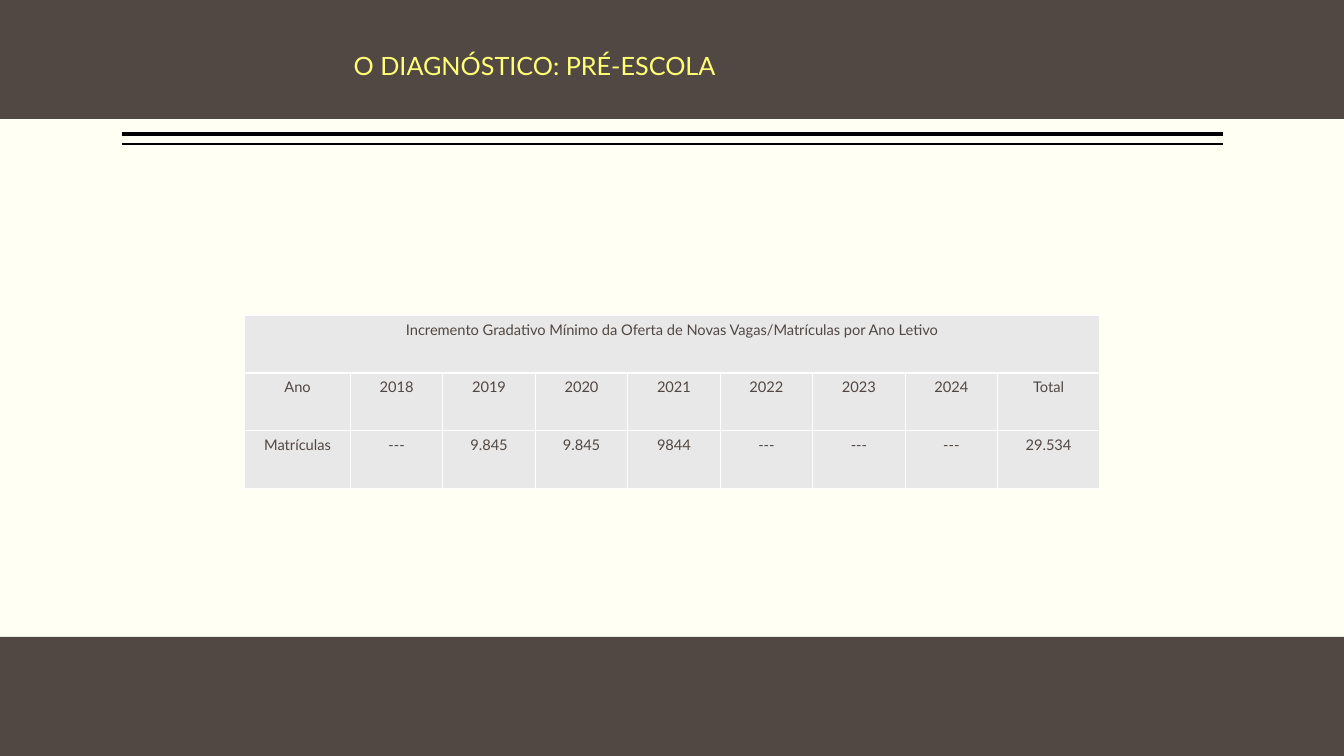
from lxml import etree
from pptx import Presentation
from pptx.dml.color import RGBColor
from pptx.enum.shapes import MSO_CONNECTOR, MSO_SHAPE
from pptx.enum.text import MSO_ANCHOR, PP_ALIGN
from pptx.oxml.ns import qn
from pptx.util import Cm, Pt

STRAIGHT = MSO_CONNECTOR.STRAIGHT
RECTANGLE = MSO_SHAPE.RECTANGLE
TOP = MSO_ANCHOR.TOP
CENTER = PP_ALIGN.CENTER
LEFT = PP_ALIGN.LEFT

FONT = "Lato"
COLORS = {
    "background": "FFFFF3",
    "band": "514843",
    "rule": "000000",
    "title": "FFFF76",
    "cell": "E9E8E8",
    "border": "FFFFFF",
    "text": "514843",
}
SLIDE_WIDTH, SLIDE_HEIGHT = Cm(33.87), Cm(19.05)
BAND_HEIGHT = Cm(3)
RULES = [(3.38, 3), (3.63, 1)]
COLUMN_WIDTHS = [2.66] + [2.33] * 7 + [2.57]
ROW_HEIGHT = 1.45
CAPTION = "Incremento Gradativo Mínimo da Oferta de Novas Vagas/Matrículas por Ano Letivo"
ROWS = [
    ["Ano", *map(str, range(2018, 2025)), "Total"],
    ["Matrículas", "---", "9.845", "9.845", "9844", "---", "---", "---", "29.534"],
]


def color(name):
    return RGBColor.from_string(COLORS[name])


def format_paragraph(paragraph, size, color_name, alignment):
    paragraph.alignment = alignment
    paragraph.font.name = FONT
    paragraph.font.size = Pt(size)
    paragraph.font.bold = False
    paragraph.font.color.rgb = color(color_name)


def add_band(slide, top):
    band = slide.shapes.add_shape(RECTANGLE, 0, top, SLIDE_WIDTH, BAND_HEIGHT)
    band.shadow.inherit = False
    band.fill.solid()
    band.fill.fore_color.rgb = color("band")
    band.line.fill.background()


def add_rule(slide, y, width):
    rule = slide.shapes.add_connector(STRAIGHT, Cm(3.07), Cm(y), Cm(30.81), Cm(y))
    rule.line.color.rgb = color("rule")
    rule.line.width = Pt(width)
    etree.SubElement(rule._element.spPr, qn("a:effectLst"))


def set_title(slide, text):
    title = slide.shapes.title
    title.left, title.top, title.width, title.height = Cm(8.66), Cm(1.14), Cm(21.18), Cm(1.02)
    frame = title.text_frame
    frame.text = text
    frame.word_wrap = True
    frame.vertical_anchor = TOP
    format_paragraph(frame.paragraphs[0], 18, "title", LEFT)
    slide.shapes._spTree.append(title._element)


def add_borders(cell):
    properties = cell._tc.get_or_add_tcPr()
    for side in ("lnL", "lnR", "lnT", "lnB"):
        line = etree.SubElement(properties, qn(f"a:{side}"), w=str(Pt(0.96)))
        fill = etree.SubElement(line, qn("a:solidFill"))
        etree.SubElement(fill, qn("a:srgbClr"), val=COLORS["border"])


def format_cell(cell, text):
    cell.text = text
    cell.margin_left = cell.margin_right = Cm(0.03)
    cell.margin_top = cell.margin_bottom = Cm(0.13)
    cell.vertical_anchor = TOP
    add_borders(cell)
    cell.fill.solid()
    cell.fill.fore_color.rgb = color("cell")
    format_paragraph(cell.text_frame.paragraphs[0], 10.5, "text", CENTER)


def add_enrollment_table(slide):
    rows = [[CAPTION] + [""] * (len(COLUMN_WIDTHS) - 1)] + ROWS
    table = slide.shapes.add_table(
        len(rows), len(COLUMN_WIDTHS), Cm(6.17), Cm(7.95),
        Cm(sum(COLUMN_WIDTHS)), Cm(ROW_HEIGHT * len(rows)),
    ).table
    table.first_row = False
    table.horz_banding = False
    for column, width in zip(table.columns, COLUMN_WIDTHS):
        column.width = Cm(width)
    for row, texts in zip(table.rows, rows):
        row.height = Cm(ROW_HEIGHT)
        for cell, text in zip(row.cells, texts):
            format_cell(cell, text)
    table.cell(0, 0).merge(table.cell(0, len(COLUMN_WIDTHS) - 1))


def main():
    presentation = Presentation()
    presentation.slide_width, presentation.slide_height = SLIDE_WIDTH, SLIDE_HEIGHT
    slide = presentation.slides.add_slide(presentation.slide_layouts.get_by_name("Title Only"))
    slide.background.fill.solid()
    slide.background.fill.fore_color.rgb = color("background")
    for y, width in RULES:
        add_rule(slide, y, width)
    for top in (SLIDE_HEIGHT - BAND_HEIGHT, 0):
        add_band(slide, top)
    add_enrollment_table(slide)
    set_title(slide, "O DIAGNÓSTICO: PRÉ-ESCOLA")
    presentation.save("out.pptx")


if __name__ == "__main__":
    main()
